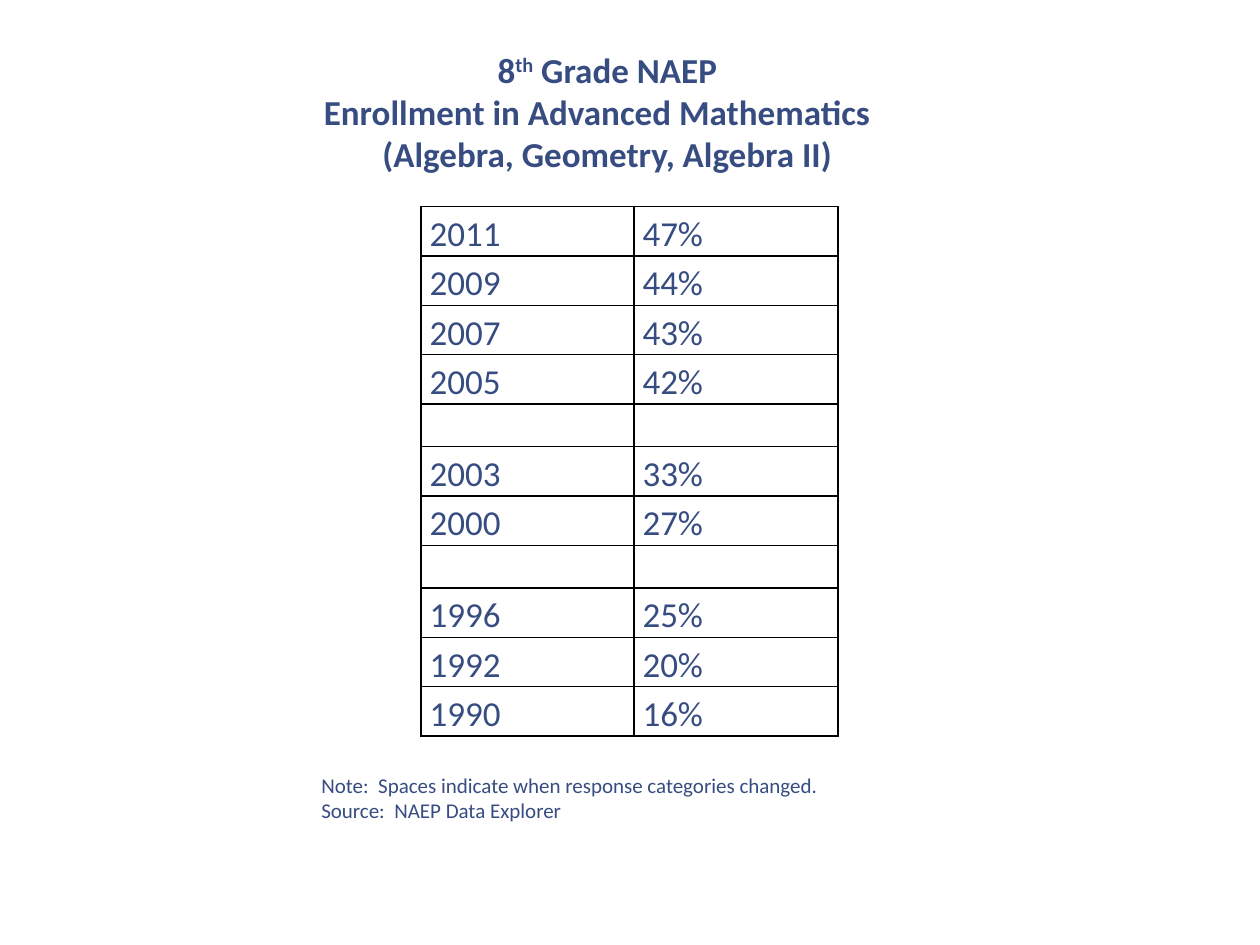
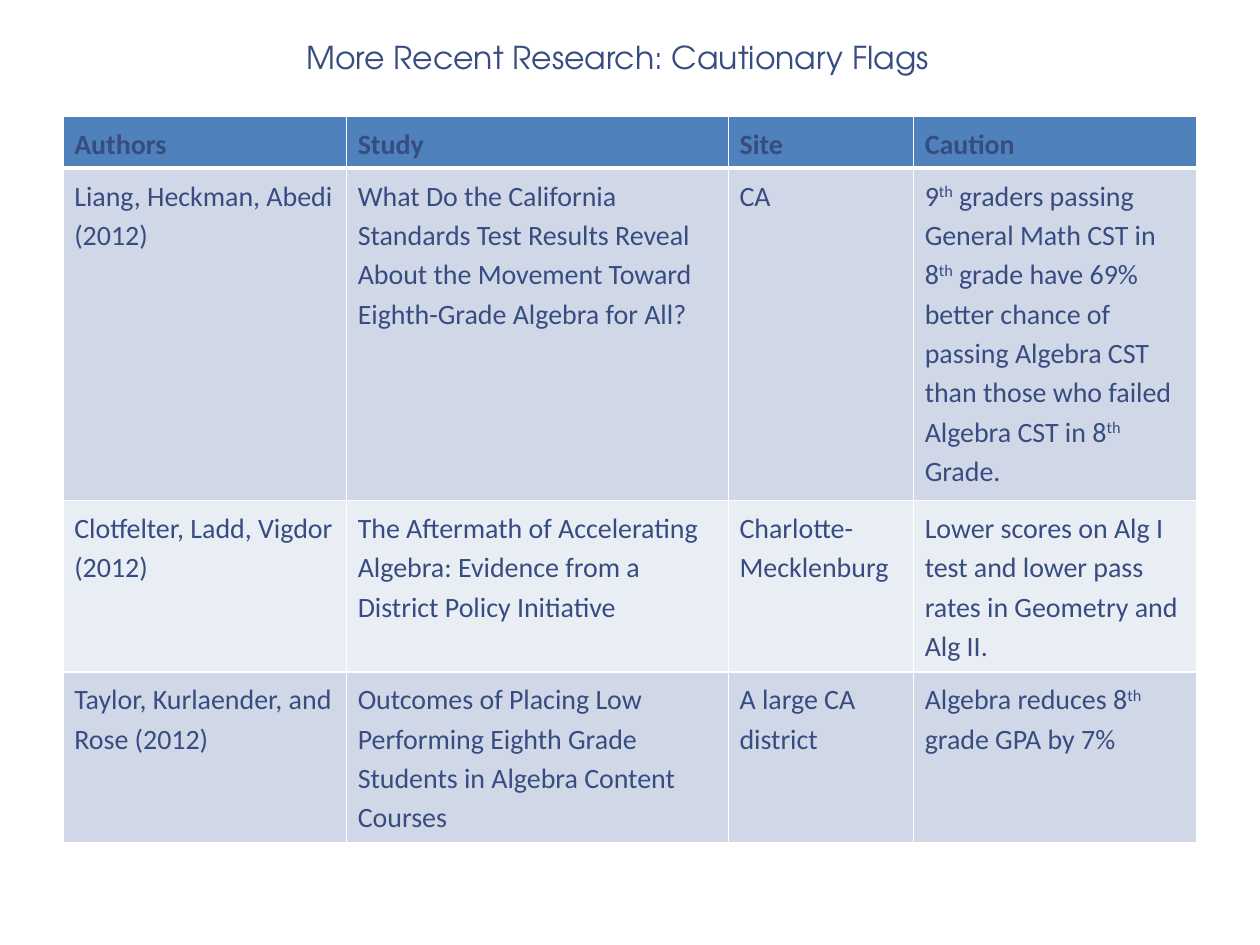
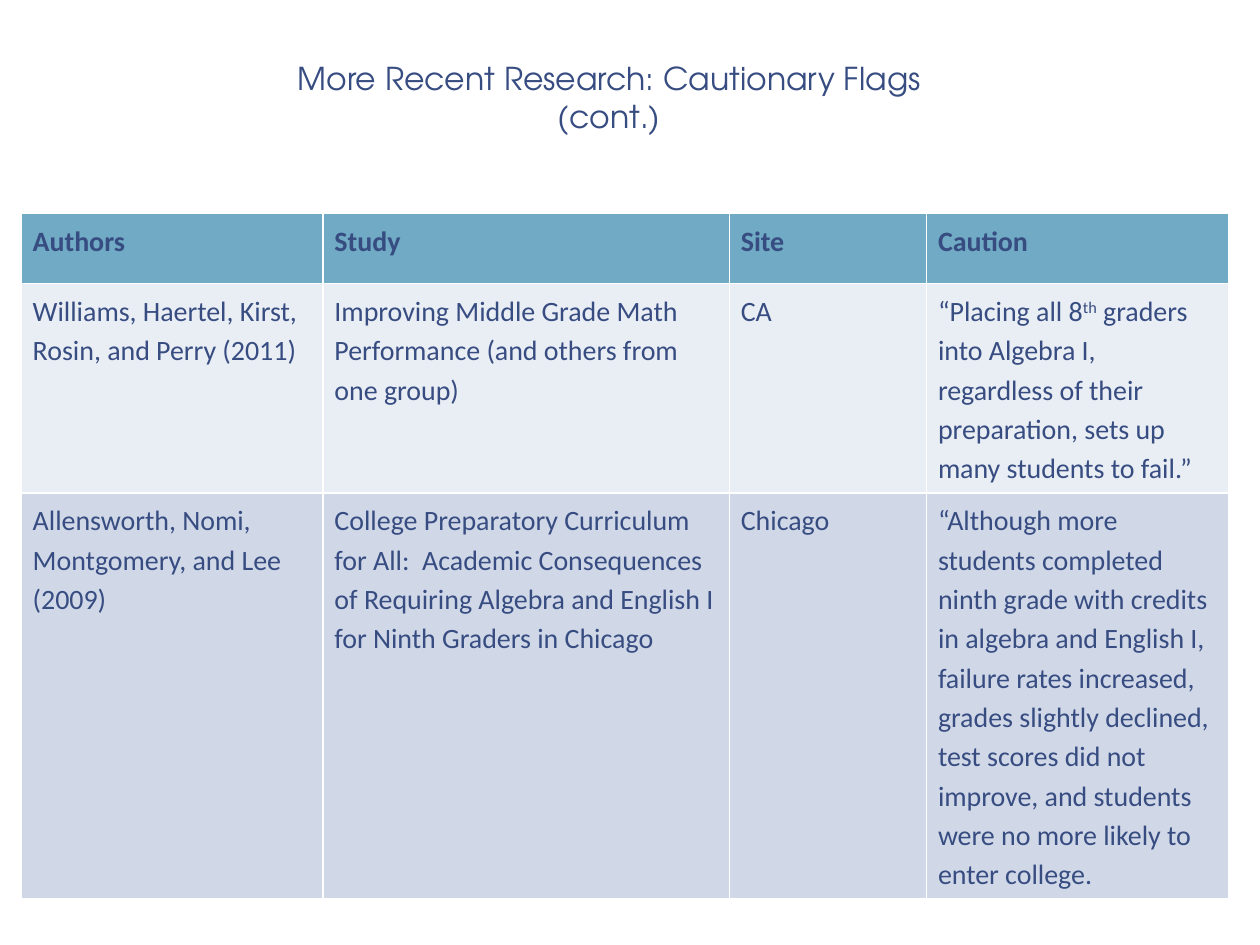
from lxml import etree
from pptx import Presentation
from pptx.dml.color import RGBColor
from pptx.enum import text
from pptx.oxml.ns import qn
from pptx.util import Inches, Pt

INK = RGBColor(0x37, 0x4C, 0x81)
BLACK = RGBColor(0, 0, 0)
WHITE = RGBColor(0xFF, 0xFF, 0xFF)
BLUE = RGBColor(0x4F, 0x81, 0xBD)
TEAL = RGBColor(0x70, 0xAA, 0xC4)
BAND_DARK = RGBColor(0xD0, 0xD8, 0xE8)
BAND_LIGHT = RGBColor(0xE9, 0xED, 0xF4)

BODY_FONT = "Calibri"
TITLE_FONT = "TeX Gyre Adventor"
LEFT, CENTER = text.PP_ALIGN.LEFT, text.PP_ALIGN.CENTER

ENROLLMENT = [
    ("2011", "47%"), ("2009", "44%"), ("2007", "43%"), ("2005", "42%"),
    ("", ""),
    ("2003", "33%"), ("2000", "27%"),
    ("", ""),
    ("1996", "25%"), ("1992", "20%"), ("1990", "16%"),
]

STUDY_HEADER = ("Authors", "Study", "Site", "Caution")
STUDY_COLUMNS = (2.25, 3.03, 1.47, 2.25)
STUDIES = [
    ("Liang, Heckman, Abedi (2012)",
     "What Do the California Standards Test Results Reveal About the "
     "Movement Toward Eighth-Grade Algebra for All?",
     "CA",
     "9^th^ graders passing General Math CST in 8^th^ grade have 69% better "
     "chance of passing Algebra CST than those who failed Algebra CST in "
     "8^th^ Grade."),
    ("Clotfelter, Ladd, Vigdor (2012)",
     "The Aftermath of Accelerating Algebra: Evidence from a District "
     "Policy Initiative",
     "Charlotte-Mecklenburg",
     "Lower scores on Alg I test and lower pass rates in Geometry and Alg II."),
    ("Taylor, Kurlaender, and Rose (2012)",
     "Outcomes of Placing Low Performing Eighth Grade Students in Algebra "
     "Content Courses",
     "A large CA district",
     "Algebra reduces 8^th^ grade GPA by 7%"),
]
MORE_STUDIES = [
    ("Williams, Haertel, Kirst, Rosin, and Perry (2011)",
     "Improving Middle Grade Math Performance (and others from one group)",
     "CA",
     "“Placing all 8^th^ graders into Algebra I, regardless of their "
     "preparation, sets up many students to fail.”"),
    ("Allensworth, Nomi, Montgomery, and Lee (2009)",
     "College Preparatory Curriculum for All:  Academic Consequences of "
     "Requiring Algebra and English I for Ninth Graders in Chicago",
     "Chicago",
     "“Although more students completed ninth grade with credits in algebra "
     "and English I, failure rates increased, grades slightly declined, test "
     "scores did not improve, and students were no more likely to enter "
     "college."),
]


def write(p, content, size, font=BODY_FONT, bold=False):
    """Add content to a paragraph; parts between carets are superscript."""
    for i, part in enumerate(content.split("^")):
        r = p.add_run()
        r.text = part
        r.font.size, r.font.name, r.font.bold = Pt(size), font, bold
        r.font.color.rgb = INK
        if i % 2:
            r._r.get_or_add_rPr().set("baseline", "30000")


def write_lines(tf, lines, aligns, size, font=BODY_FONT, bold=False):
    tf.word_wrap = True
    tf.auto_size = text.MSO_AUTO_SIZE.NONE
    for i, (line, align) in enumerate(zip(lines, aligns)):
        p = tf.add_paragraph() if i else tf.paragraphs[0]
        p.alignment = align
        write(p, line, size, font, bold)


def place(sp, left, top, width, height):
    sp.left, sp.top = Inches(left), Inches(top)
    sp.width, sp.height = Inches(width), Inches(height)


def add_titled_slide(prs, box, lines, aligns, size=18, font=TITLE_FONT,
                     bold=False, anchor=text.MSO_ANCHOR.TOP):
    s = prs.slides.add_slide(prs.slide_layouts[5])
    title = s.shapes.title
    place(title, *box)
    title.text_frame.vertical_anchor = anchor
    write_lines(title.text_frame, lines, aligns, size, font, bold)
    return s


def set_borders(cell, color, top=1, bottom=1):
    tcPr = cell._tc.get_or_add_tcPr()
    for side, width in (("L", 1), ("R", 1), ("T", top), ("B", bottom)):
        ln = etree.SubElement(tcPr, qn("a:ln" + side), w=str(Pt(width)))
        fill = etree.SubElement(ln, qn("a:solidFill"))
        etree.SubElement(fill, qn("a:srgbClr"), val=str(color))


def set_margins(cell, side, end):
    cell.margin_left = cell.margin_right = Inches(side)
    cell.margin_top = cell.margin_bottom = Inches(end)


def add_grid(s, box, columns, heights):
    """Add a table without banding, with the given column and row sizes."""
    frame = s.shapes.add_table(len(heights), len(columns),
                               *(Inches(v) for v in box))
    table = frame.table
    table.horz_banding = False
    for column, width in zip(table.columns, columns):
        column.width = Inches(width)
    for row, height in zip(table.rows, heights):
        row.height = Inches(height)
    frame.height = Inches(box[3])
    return table


def add_enrollment_table(s):
    heights = [0.39 if year else 0.34 for year, _ in ENROLLMENT]
    table = add_grid(s, (3.34, 1.64, 3.31, 4.22), (1.69, 1.62), heights)
    table.first_row = False
    for row, values in zip(table.rows, ENROLLMENT):
        for cell, value in zip(row.cells, values):
            set_margins(cell, 0.07, 0)
            set_borders(cell, BLACK)
            cell.fill.background()
            if value:
                p = cell.text_frame.paragraphs[0]
                p.line_spacing = 1.15
                write(p, value, 20)


def add_study_table(s, box, heights, studies, header_fill, bands, header_rule):
    scale = box[2] / sum(STUDY_COLUMNS)
    table = add_grid(s, box, [w * scale for w in STUDY_COLUMNS], heights)
    for i, values in enumerate([STUDY_HEADER] + studies):
        for cell, value in zip(table.rows[i].cells, values):
            set_margins(cell, 0.09, 0.05)
            set_borders(cell, WHITE, top=header_rule if i == 1 else 1,
                        bottom=header_rule if i == 0 else 1)
            cell.fill.solid()
            cell.fill.fore_color.rgb = bands[(i - 1) % 2] if i else header_fill
            p = cell.text_frame.paragraphs[0]
            p.line_spacing = 1.15
            p.space_after = Pt(10)
            write(p, value, 16, bold=i == 0)


def add_note(s, box, lines):
    tf = s.shapes.add_textbox(*(Inches(v) for v in box)).text_frame
    tf.margin_left = Inches(0.13)
    write_lines(tf, lines, [LEFT] * len(lines), 12)


def main():
    prs = Presentation()
    prs.slide_width, prs.slide_height = Inches(10), Inches(7.5)

    s = add_titled_slide(
        prs, (2.47, 0.33, 4.7, 1.11),
        ["8^th^ Grade NAEP", "Enrollment in Advanced Mathematics",
         "(Algebra, Geometry, Algebra II)"],
        [CENTER, LEFT, CENTER], 20, BODY_FONT, True, text.MSO_ANCHOR.MIDDLE)
    add_enrollment_table(s)
    add_note(s, (2.42, 6.08, 5, 0.5),
             ["Note:  Spaces indicate when response categories changed.",
              "Source:  NAEP Data Explorer"])

    s = add_titled_slide(prs, (2.33, 0.25, 5.33, 0.4),
                         ["More Recent Research: Cautionary Flags"], [LEFT])
    add_study_table(s, (0.5, 0.92, 9, 5.75), (0.4, 2.64, 1.36, 1.36),
                    STUDIES, BLUE, (BAND_DARK, BAND_LIGHT), 3)

    s = add_titled_slide(prs, (2.17, 0.42, 5.33, 0.71),
                         ["More Recent Research: Cautionary Flags (cont.)"],
                         [CENTER])
    add_study_table(s, (0.17, 1.69, 9.58, 5.34), (0.56, 1.51, 2.93),
                    MORE_STUDIES, TEAL, (BAND_LIGHT, BAND_DARK), 1)

    prs.save("out.pptx")


if __name__ == "__main__":
    main()
